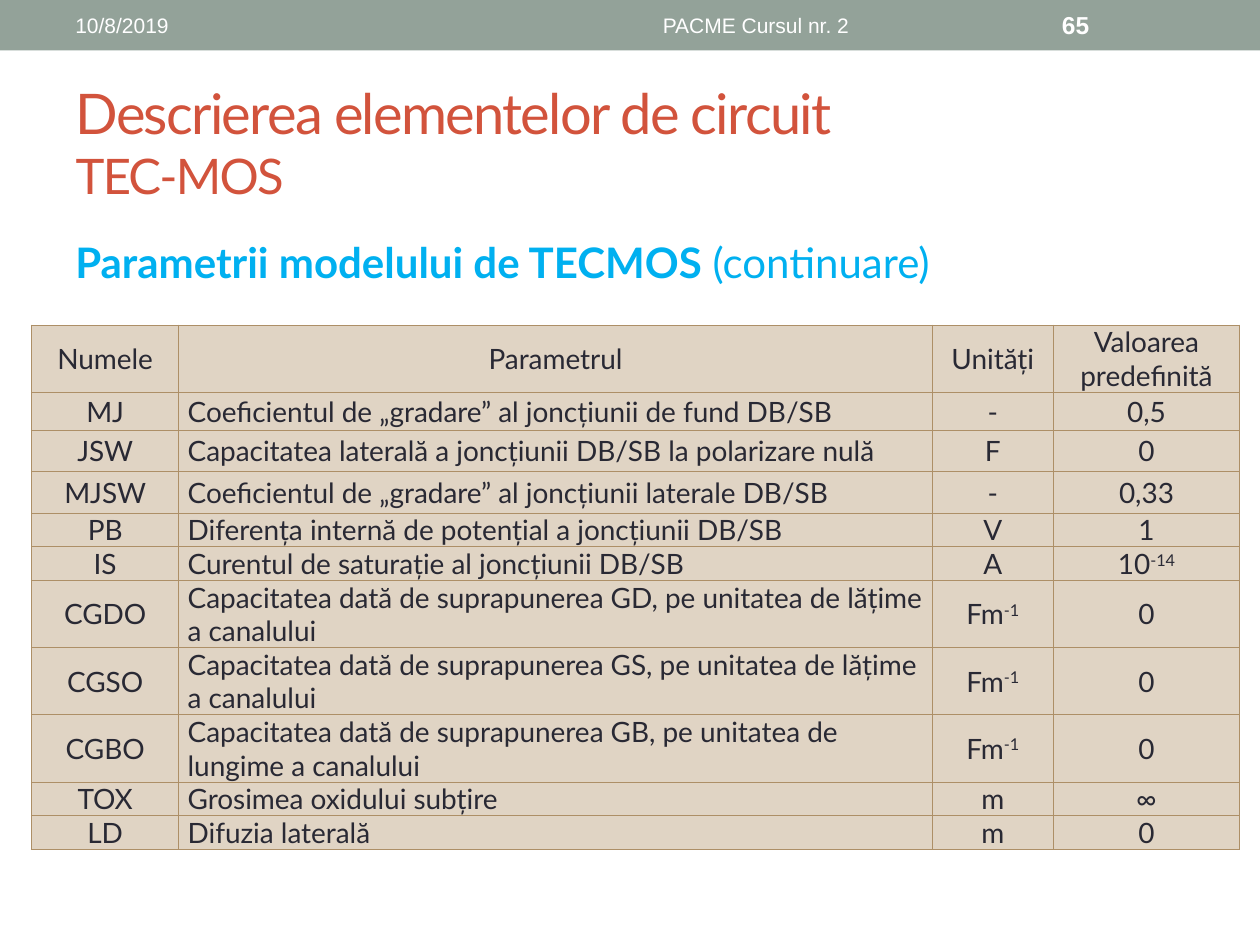
"""Build the slide listing the MOS transistor model parameters."""
from dataclasses import dataclass

from lxml import etree
from pptx import Presentation
from pptx.dml.color import RGBColor
from pptx.enum.shapes import MSO_SHAPE
from pptx.enum.text import MSO_ANCHOR, MSO_AUTO_SIZE, PP_ALIGN
from pptx.oxml.ns import qn
from pptx.util import Inches, Pt

RECTANGLE = MSO_SHAPE.RECTANGLE
TOP, MIDDLE = MSO_ANCHOR.TOP, MSO_ANCHOR.MIDDLE
LEFT, CENTER = PP_ALIGN.LEFT, PP_ALIGN.CENTER
NO_AUTOFIT = MSO_AUTO_SIZE.NONE


@dataclass(frozen=True)
class Theme:
    band: str = "93A299"
    title: str = "D2533C"
    subtitle: str = "00B0F0"
    white: str = "FFFFFF"
    ink: str = "292934"
    cell: str = "E0D4C4"
    border: str = "AD8F67"
    heading_font: str = "Lato"
    band_font: str = "Arial"
    title_size: int = 32
    topic_size: int = 28
    subtitle_size: int = 24
    table_size: int = 16
    band_size: int = 12
    number_size: int = 14
    border_width: float = 0.75


def style_run(run, font, size, color, bold=False):
    run.font.name = font
    run.font.size = Pt(size)
    run.font.color.rgb = RGBColor.from_string(color)
    run.font.bold = bold


def add_text(slide, box, parts, font, size, color, align=LEFT, anchor=MIDDLE):
    frame = slide.shapes.add_textbox(*map(Inches, box)).text_frame
    frame.word_wrap = True
    frame.vertical_anchor = anchor
    paragraph = frame.paragraphs[0]
    paragraph.alignment = align
    for text, bold in parts:
        run = paragraph.add_run()
        run.text = text
        style_run(run, font, size, color, bold)
    return paragraph


theme = Theme()
deck = Presentation()
deck.slide_width, deck.slide_height = Inches(10), Inches(7.5)
slide = deck.slides.add_slide(deck.slide_layouts[5])

band = slide.shapes.add_shape(RECTANGLE, 0, 0, Inches(10), Inches(0.4))
band.shadow.inherit = False
band.fill.solid()
band.fill.fore_color.rgb = RGBColor.from_string(theme.band)
band.line.fill.background()

title = slide.shapes.title
title.left, title.top = Inches(0.5), Inches(0.58)
title.width, title.height = Inches(9), Inches(1.08)
title.text_frame.text = "Descrierea elementelor de circuit\vTEC-MOS"
title.text_frame.auto_size = NO_AUTOFIT
title.text_frame.vertical_anchor = MIDDLE
heading = title.text_frame.paragraphs[0]
heading.alignment = LEFT
for run, size in zip(heading.runs, (theme.title_size, theme.topic_size)):
    style_run(run, theme.heading_font, size, theme.title)
    run.font._element.set("spc", "-100")

subtitle = add_text(
    slide, (0.5, 1.83, 9, 0.5),
    [("Parametrii modelului de TECMOS", True), (" (continuare)", False)],
    theme.heading_font, theme.subtitle_size, theme.subtitle, anchor=TOP)
subtitle.space_before = Pt(4.8)

for text, left, width, size, align, bold in (
    ("10/8/2019", 0.5, 3.17, theme.band_size, LEFT, False),
    ("PACME Cursul nr. 2", 3.75, 4.5, theme.band_size, CENTER, False),
    ("65", 8.33, 1.17, theme.number_size, LEFT, True),
):
    add_text(slide, (left, 0.02, width, 0.36), [(text, bold)],
             theme.band_font, size, theme.white, align)

parameters = [
    ("Numele", "Parametrul", "Unități", "Valoarea predefinită"),
    ("MJ", "Coeficientul de „gradare” al joncțiunii de fund DB/SB", "-", "0,5"),
    ("JSW", "Capacitatea laterală a joncțiunii DB/SB la polarizare nulă", "F", "0"),
    ("MJSW", "Coeficientul de „gradare” al joncțiunii laterale DB/SB", "-", "0,33"),
    ("PB", "Diferența internă de potențial a joncțiunii DB/SB", "V", "1"),
    ("IS", "Curentul de saturație al joncțiunii DB/SB", "A", "10^-14"),
    ("CGDO", "Capacitatea dată de suprapunerea GD, pe unitatea de lățime a canalului",
     "Fm^-1", "0"),
    ("CGSO", "Capacitatea dată de suprapunerea GS, pe unitatea de lățime a canalului",
     "Fm^-1", "0"),
    ("CGBO", "Capacitatea dată de suprapunerea GB, pe unitatea de lungime a canalului",
     "Fm^-1", "0"),
    ("TOX", "Grosimea oxidului subțire", "m", "∞"),
    ("LD", "Difuzia laterală", "m", "0"),
]
column_widths = (1.17, 5.98, 0.96, 1.48)
row_heights = (0.46, 0.3, 0.33, 0.33, 0.23, 0.23, 0.46, 0.46, 0.46, 0.23, 0.23)
table = slide.shapes.add_table(
    len(parameters), len(column_widths), Inches(0.25), Inches(2.58),
    Inches(sum(column_widths)), Inches(sum(row_heights))).table
for column, width in zip(table.columns, column_widths):
    column.width = Inches(width)

for row_index, (row, height, values) in enumerate(
        zip(table.rows, row_heights, parameters)):
    row.height = Inches(height)
    for column_index, (cell, value) in enumerate(zip(row.cells, values)):
        cell.margin_left = cell.margin_right = Inches(0.07)
        cell.margin_top = cell.margin_bottom = 0
        cell.vertical_anchor = MIDDLE
        paragraph = cell.text_frame.paragraphs[0]
        is_description = column_index == 1 and row_index > 0
        paragraph.alignment = LEFT if is_description else CENTER
        for part_index, part in enumerate(value.split("^")):
            run = paragraph.add_run()
            run.text = part
            style_run(run, theme.heading_font, theme.table_size, theme.ink)
            if part_index:
                run.font._element.set("baseline", "30000")
        properties = cell._tc.get_or_add_tcPr()
        for side in ("a:lnL", "a:lnR", "a:lnT", "a:lnB"):
            edge = etree.SubElement(properties, qn(side),
                                    w=str(Pt(theme.border_width)))
            edge_fill = etree.SubElement(edge, qn("a:solidFill"))
            etree.SubElement(edge_fill, qn("a:srgbClr"), val=theme.border)
        cell.fill.solid()
        cell.fill.fore_color.rgb = RGBColor.from_string(theme.cell)

deck.save("out.pptx")
